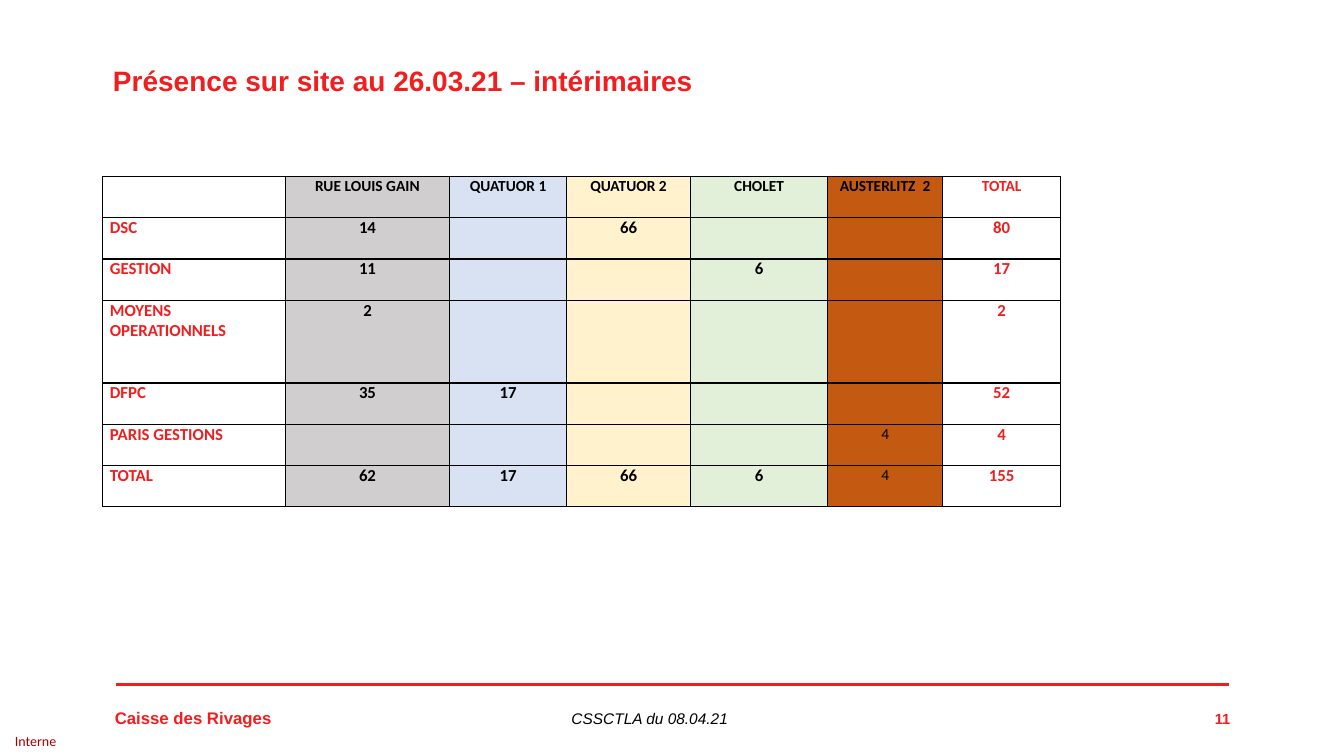
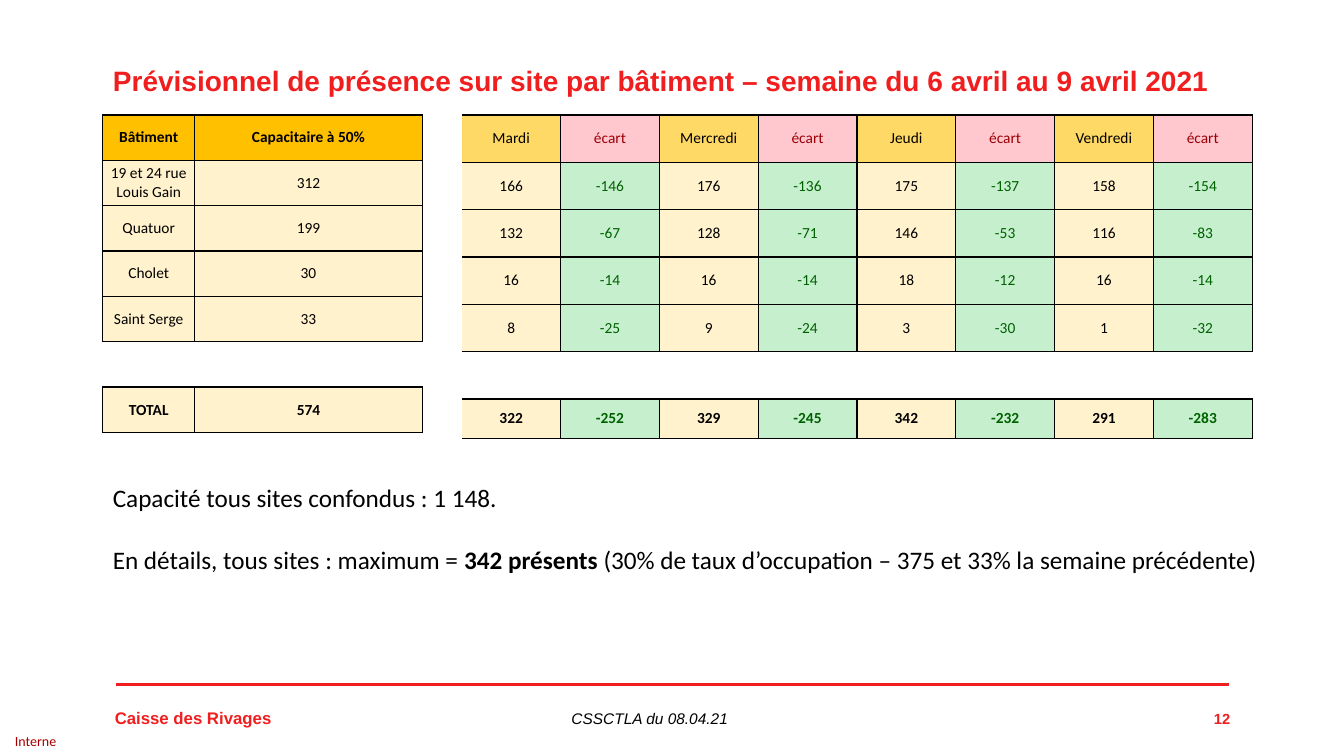
from dataclasses import dataclass

from lxml import etree
from pptx import Presentation
from pptx.dml.color import RGBColor
from pptx.enum.shapes import MSO_CONNECTOR
from pptx.enum.text import MSO_ANCHOR as ANCHOR, PP_ALIGN as ALIGN
from pptx.oxml.ns import qn
from pptx.util import Inches, Pt

COLORS = {
    "red": "F01E1E", "dark_red": "A80000", "black": "000000", "white": "FFFFFF",
    "grey": "D0CECE", "blue": "D9E2F3", "cream": "FFF2CC", "green": "E2EFD9",
    "rust": "C45911", "gold": "FFC000", "yellow": "FFD966",
    "gap_head": "FFC7CE", "gap_head_text": "9C0006",
    "gap": "C6EFCE", "gap_text": "006100",
}
PLAIN_TABLE = "{2D5ABB26-0587-4C30-8999-92F81FD0307C}"


def rgb(name):
    return RGBColor.from_string(COLORS[name])


@dataclass
class Cell:
    text: object = ""
    fill: str = "white"
    color: str = "black"
    bold: bool = False
    size: float = 11
    align: ALIGN = ALIGN.CENTER
    sides: str = "LRTB"


class Deck:
    def __init__(self):
        self.prs = Presentation()
        self.prs.slide_width, self.prs.slide_height = Inches(13.33), Inches(7.5)
        self.s = None

    def font(self, p, size, color="black", name="Calibri", bold=False, italic=False):
        f = p.font
        f.name, f.size, f.bold, f.italic = name, Pt(size), bold, italic
        f.color.rgb = rgb(color)

    def slide(self, title, number):
        """Start a slide with its title, footer line and footer texts."""
        self.s = self.prs.slides.add_slide(self.prs.slide_layouts[5])
        self.title(title)
        self.line(1.15, 6.79, 12.19, 6.79)
        self.text(1.04, 6.97, 2.5, 0.3, "Caisse des Rivages", size=12,
                  color="red", name="Arial", bold=True)
        self.text(5.57, 6.99, 2.2, 0.29, "CSSCTLA du 08.04.21", size=11,
                  name="Arial", italic=True)
        self.text(11.71, 6.97, 0.59, 0.31, str(number), align=ALIGN.RIGHT,
                  anchor=ANCHOR.MIDDLE, size=10.5, color="red", name="Arial", bold=True)
        self.text(0.05, 7.21, 0.9, 0.29, "Interne", anchor=ANCHOR.MIDDLE,
                  size=10, color="dark_red")

    def title(self, text):
        sp = self.s.shapes.title
        sp.left, sp.top, sp.width, sp.height = map(Inches, (1.02, 0.62, 11.42, 0.51))
        tf = sp.text_frame
        tf.text, tf.vertical_anchor = text, ANCHOR.TOP
        p = tf.paragraphs[0]
        p.alignment, p.line_spacing = ALIGN.LEFT, 0.9
        self.font(p, 20, "red", "Arial", bold=True)

    def line(self, x1, y1, x2, y2):
        ln = self.s.shapes.add_connector(MSO_CONNECTOR.STRAIGHT, *map(Inches, (x1, y1, x2, y2)))
        ln.line.color.rgb, ln.line.width = rgb("red"), Pt(2)
        etree.SubElement(ln.element.spPr, qn("a:effectLst"))

    def text(self, x, y, w, h, *paragraphs, align=ALIGN.LEFT, anchor=ANCHOR.TOP,
             space_before=0, **font):
        """Add a text box; a paragraph is a string or a list of (text, bold) runs."""
        tf = self.s.shapes.add_textbox(*map(Inches, (x, y, w, h))).text_frame
        tf.word_wrap, tf.vertical_anchor = True, anchor
        for i, content in enumerate(paragraphs):
            p = tf.add_paragraph() if i else tf.paragraphs[0]
            p.alignment = align
            if i:
                p.space_before = Pt(space_before)
            self.font(p, **font)
            if isinstance(content, str):
                p.text = content
                continue
            for run_text, bold in content:
                r = p.add_run()
                r.text, r.font.bold = run_text, bold

    def table(self, x, y, widths, heights, rows, margin, anchor=ANCHOR.TOP):
        frame = self.s.shapes.add_table(len(heights), len(widths), *map(
            Inches, (x, y, sum(widths), sum(heights))))
        table = frame.table
        table.first_row = table.horz_banding = False
        frame._element.find(".//" + qn("a:tableStyleId")).text = PLAIN_TABLE
        for column, w in zip(table.columns, widths):
            column.width = Inches(w)
        for row, h, cells in zip(table.rows, heights, rows):
            row.height = Inches(h)
            for tc, cell in zip(row.cells, cells):
                self.cell(tc, cell, margin, anchor)

    def cell(self, tc, cell, margin, anchor):
        self.borders(tc, cell.sides)
        tc.fill.solid()
        tc.fill.fore_color.rgb = rgb(cell.fill)
        tc.margin_left = tc.margin_right = Inches(margin)
        tc.margin_top = tc.margin_bottom = 0
        tc.vertical_anchor = anchor
        tc.text = str(cell.text)
        p = tc.text_frame.paragraphs[0]
        p.alignment = cell.align
        self.font(p, cell.size, cell.color, bold=cell.bold)

    def borders(self, tc, sides):
        tc_pr = tc._tc.get_or_add_tcPr()
        for side in "LRTB":
            ln = etree.SubElement(tc_pr, qn("a:ln" + side), w=str(Pt(1)))
            if side in sides:
                fill = etree.SubElement(ln, qn("a:solidFill"))
                etree.SubElement(fill, qn("a:srgbClr"), val=COLORS["black"])
            else:
                etree.SubElement(ln, qn("a:noFill"))


def attendance_slide(deck):
    deck.slide("Présence sur site au 26.03.21 – intérimaires", 11)
    sites = [("RUE LOUIS GAIN", "grey"), ("QUATUOR 1", "blue"), ("QUATUOR 2", "cream"),
             ("CHOLET", "green"), ("AUSTERLITZ  2", "rust")]
    teams = {
        "DSC": [14, 0, 66, 0, 0],
        "GESTION": [11, 0, 0, 6, 0],
        "MOYENS OPERATIONNELS": [2, 0, 0, 0, 0],
        "DFPC": [35, 17, 0, 0, 0],
        "PARIS GESTIONS": [0, 0, 0, 0, 4],
    }
    teams["TOTAL"] = [sum(column) for column in zip(*teams.values())]

    rows = [[Cell(), *(Cell(site, fill, bold=True) for site, fill in sites),
             Cell("TOTAL", color="red", bold=True)]]
    for team, counts in teams.items():
        row = [Cell(team, color="red", bold=True, size=12, align=ALIGN.LEFT)]
        for (_, fill), count in zip(sites, counts):
            plain = fill == "rust"
            row.append(Cell(count or "", fill, bold=not plain, size=11 if plain else 12))
        rows.append(row + [Cell(sum(counts), color="red", bold=True, size=12)])
    heights = [0.82 if team == "MOYENS OPERATIONNELS" else 0.41 for team in ["", *teams]]
    deck.table(1.02, 1.75, [1.81, 1.63, 1.16, 1.23, 1.36, 1.14, 1.17], heights, rows, 0.07)


def forecast_slide(deck):
    deck.slide("Prévisionnel de présence sur site par bâtiment – "
               "semaine du 6 avril au 9 avril 2021", 12)
    capacities = {"19 et 24 rue Louis Gain": 312, "Quatuor": 199, "Cholet": 30,
                  "Saint Serge": 33}
    days = {"Mardi": [166, 132, 16, 8], "Mercredi": [176, 128, 16, 9],
            "Jeudi": [175, 146, 18, 3], "Vendredi": [158, 116, 16, 1]}

    def spacer(count):
        return [Cell(sides="TB") for _ in range(count)]

    def capacity_row(name, capacity, fill="cream", bold=False):
        return [Cell(name, fill, bold=bold), Cell(capacity, fill, bold=bold)]

    def presence_row(presences, capacity, bold=False):
        row = []
        for presence in presences:
            row += [Cell(presence, "cream", bold=bold),
                    Cell(presence - capacity, "gap", "gap_text", bold)]
        return row

    total = sum(capacities.values())
    capacity_rows = [
        capacity_row("Bâtiment", "Capacitaire à 50%", "gold", True),
        *(capacity_row(*item) for item in capacities.items()),
        spacer(2),
        capacity_row("TOTAL", total, bold=True),
    ]
    header = []
    for day in days:
        header += [Cell(day, "yellow"), Cell("écart", "gap_head", "gap_head_text")]
    presence_rows = [
        header,
        *map(presence_row, zip(*days.values()), capacities.values()),
        spacer(len(header)),
        presence_row(map(sum, days.values()), total, True),
    ]
    for row in presence_rows:
        row[0].sides = row[0].sides.replace("L", "")

    deck.table(1.02, 1.14, [0.91, 2.26], [0.45] * 7, capacity_rows, 0.05, ANCHOR.MIDDLE)
    deck.table(4.58, 1.14, [0.98] * 8, [0.47] * 6 + [0.39], presence_rows, 0.05,
               ANCHOR.MIDDLE)
    deck.text(1.02, 4.74, 11.61, 1.01, "Capacité tous sites confondus : 1 148.",
              [("En détails, tous sites : maximum = ", False), ("342 présents ", True),
               ("(30% de taux d’occupation – 375 et 33% la semaine précédente)", False)],
              space_before=22, size=18)


def main():
    deck = Deck()
    attendance_slide(deck)
    forecast_slide(deck)
    deck.prs.save("out.pptx")


if __name__ == "__main__":
    main()
